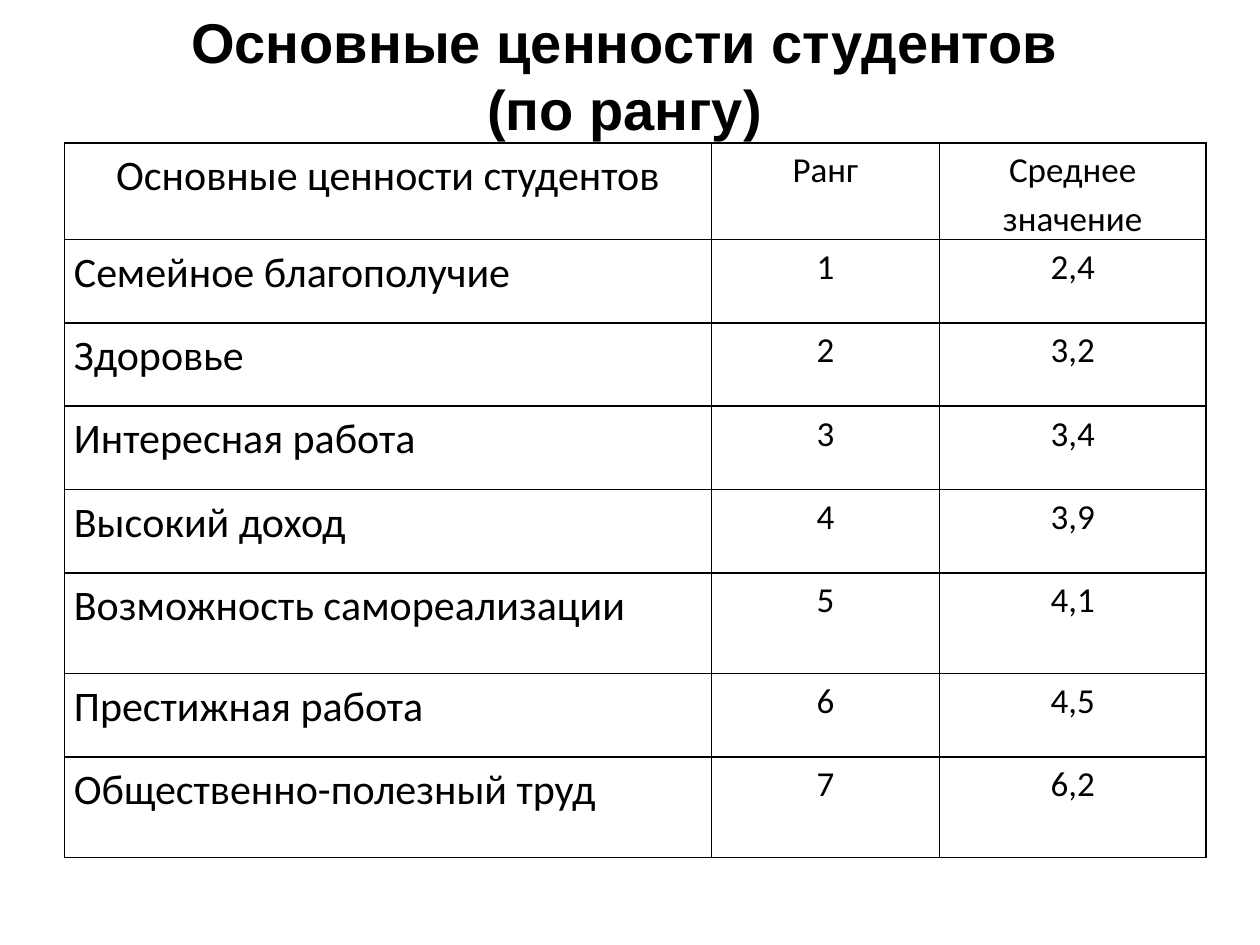
from lxml import etree
from pptx import Presentation
from pptx.dml.color import RGBColor
from pptx.enum.text import MSO_ANCHOR, MSO_AUTO_SIZE, PP_ALIGN
from pptx.oxml.ns import qn
from pptx.util import Cm, Pt

BLACK = RGBColor(0x00, 0x00, 0x00)
WHITE = RGBColor(0xFF, 0xFF, 0xFF)
LEFT, CENTER = PP_ALIGN.LEFT, PP_ALIGN.CENTER
MIDDLE = MSO_ANCHOR.MIDDLE
GROW = MSO_AUTO_SIZE.SHAPE_TO_FIT_TEXT

HEADING = "Основные ценности студентов (по рангу)"
COLUMN_NAMES = ("Основные ценности студентов", "Ранг", "Среднее значение")
VALUE_MEANS = (
    ("Семейное благополучие", "2,4"),
    ("Здоровье", "3,2"),
    ("Интересная работа", "3,4"),
    ("Высокий доход", "3,9"),
    ("Возможность самореализации", "4,1"),
    ("Престижная работа", "4,5"),
    ("Общественно-полезный труд", "6,2"),
)
COLUMN_WIDTHS = (13.04, 4.6, 5.37)
ROW_HEIGHTS = (1.65, 1.68, 1.68, 1.68, 1.68, 2.03, 1.68, 2.03)


def write_text(frame, text, size, font="Calibri", bold=False, align=CENTER, spacing=1.0):
    """Fill a text frame with one formatted paragraph."""
    paragraph = frame.paragraphs[0]
    paragraph.alignment = align
    paragraph.line_spacing = spacing
    run = paragraph.add_run()
    run.text = text
    run.font.name = font
    run.font.size = Pt(size)
    run.font.bold = bold
    run.font.color.rgb = BLACK


def draw_borders(cell):
    """Give a table cell a thin black line on every side."""
    properties = cell._tc.get_or_add_tcPr()
    for side in ("a:lnL", "a:lnR", "a:lnT", "a:lnB"):
        border = etree.SubElement(properties, qn(side), w=str(Pt(1)))
        fill = etree.SubElement(border, qn("a:solidFill"))
        etree.SubElement(fill, qn("a:srgbClr"), val=str(BLACK))


def fill_cell(cell, text, size, align):
    """Format one table cell and write its text."""
    cell.margin_left = cell.margin_right = Cm(0.19)
    cell.margin_top = cell.margin_bottom = 0
    draw_borders(cell)
    cell.fill.solid()
    cell.fill.fore_color.rgb = WHITE
    write_text(cell.text_frame, text, size, align=align, spacing=1.15)


def add_heading(slide):
    """Place and write the slide title."""
    heading = slide.shapes.title
    heading.left, heading.top = Cm(2.69), 0
    heading.width, heading.height = Cm(19.81), Cm(3)
    frame = heading.text_frame
    frame.word_wrap = True
    frame.vertical_anchor = MIDDLE
    frame.auto_size = GROW
    write_text(frame, HEADING, 32, font="Arial", bold=True)


def add_ranking(slide):
    """Add the table of values in order of rank."""
    ranked = [(name, str(rank), mean) for rank, (name, mean) in enumerate(VALUE_MEANS, 1)]
    rows = [COLUMN_NAMES, *ranked]
    ranking = slide.shapes.add_table(
        len(rows), len(COLUMN_NAMES), Cm(1.3), Cm(2.88),
        Cm(sum(COLUMN_WIDTHS)), Cm(sum(ROW_HEIGHTS)),
    ).table
    ranking.first_row = ranking.horz_banding = False
    for column, width in zip(ranking.columns, COLUMN_WIDTHS):
        column.width = Cm(width)
    for row, height in zip(ranking.rows, ROW_HEIGHTS):
        row.height = Cm(height)
    for row_index, texts in enumerate(rows):
        for column_index, text in enumerate(texts):
            size = 24 if column_index == 0 else 20
            align = LEFT if row_index and column_index == 0 else CENTER
            fill_cell(ranking.cell(row_index, column_index), text, size, align)


def main():
    """Build and save the slide."""
    presentation = Presentation()
    presentation.slide_width, presentation.slide_height = Cm(25.4), Cm(19.05)
    slide = presentation.slides.add_slide(presentation.slide_layouts[5])
    add_heading(slide)
    add_ranking(slide)
    presentation.save("out.pptx")


if __name__ == "__main__":
    main()
